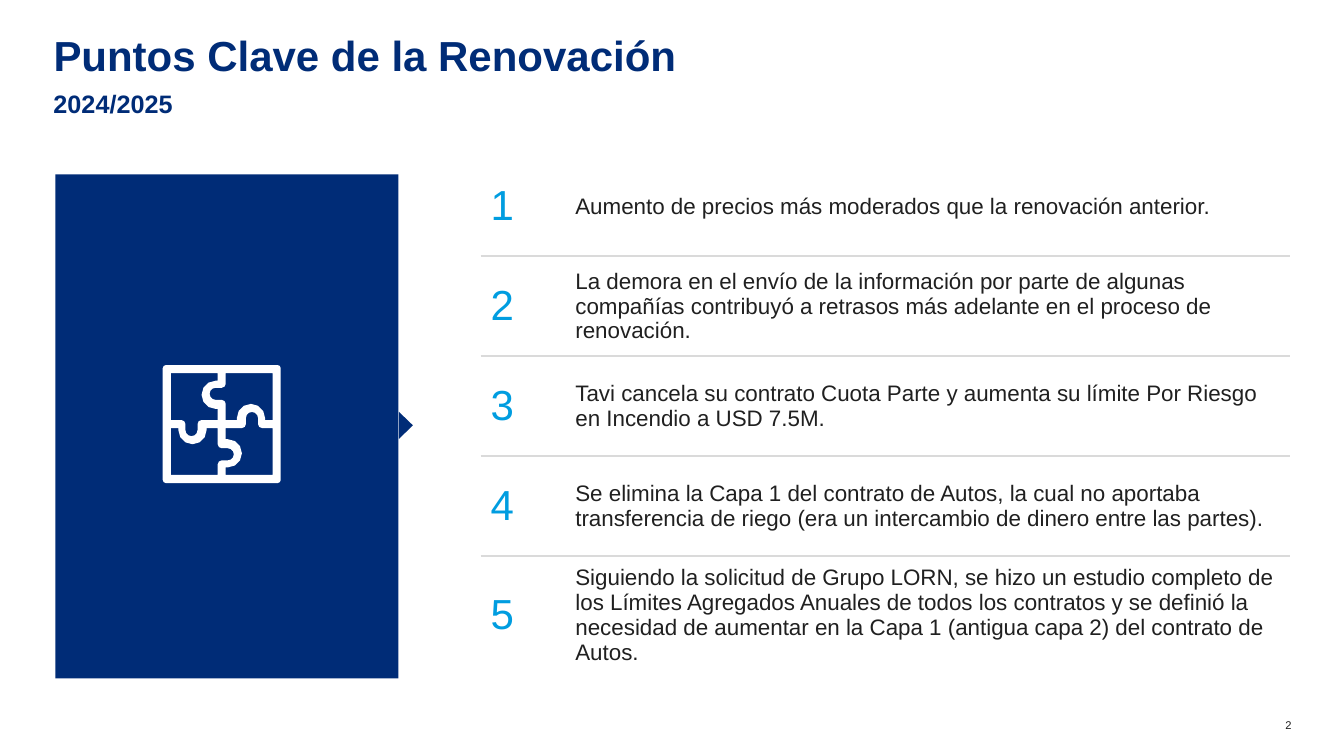
from dataclasses import dataclass
from math import cos, radians, sin

from lxml.etree import SubElement
from pptx import Presentation
from pptx.dml.color import RGBColor
from pptx.enum.shapes import MSO_SHAPE
from pptx.enum.text import MSO_ANCHOR, PP_ALIGN
from pptx.oxml.ns import qn
from pptx.util import Inches, Pt

COLORS = {"navy": "002C77", "sky": "009DE0", "text": "202020", "rule": "DADADA", "white": "FFFFFF"}
WIDTH, HEIGHT = Inches(13.33), Inches(7.5)
NO_STYLE = "{2D5ABB26-0587-4C30-8999-92F81FD0307C}"
KEY_POINTS = [
    "Aumento de precios más moderados que la renovación anterior.",
    "La demora en el envío de la información por parte de algunas compañías contribuyó a "
    "retrasos más adelante en el proceso de renovación.",
    "Tavi cancela su contrato Cuota Parte y aumenta su límite Por Riesgo en Incendio a USD 7.5M.",
    "Se elimina la Capa 1 del contrato de Autos, la cual no aportaba transferencia de riego "
    "(era un intercambio de dinero entre las partes).",
    "Siguiendo la solicitud de Grupo LORN, se hizo un estudio completo de los Límites Agregados "
    "Anuales de todos los contratos y se definió la necesidad de aumentar en la Capa 1 "
    "(antigua capa 2) del contrato de Autos.",
]
Point = tuple[float, float]


def across(share: float) -> int:
    """Percentage of the slide's width."""
    return round(WIDTH * share / 100)


def down(share: float) -> int:
    """Percentage of the slide's height."""
    return round(HEIGHT * share / 100)


@dataclass(frozen=True)
class Area:
    """Place on the slide, in percent of its width and height."""
    left: float
    top: float
    width: float
    height: float

    def emu(self) -> tuple[int, int, int, int]:
        return across(self.left), down(self.top), across(self.width), down(self.height)


@dataclass(frozen=True)
class TextStyle:
    size: float
    color: str
    bold: bool = False
    align: PP_ALIGN = PP_ALIGN.LEFT
    spacing: float = 1.0


TITLE = TextStyle(30, "navy", bold=True, spacing=0.8)
SUBTITLE = TextStyle(18, "navy", bold=True)
PAGE_NUMBER = TextStyle(8, "text", align=PP_ALIGN.RIGHT)
ORDINAL = TextStyle(30, "sky")
STATEMENT = TextStyle(16, "text")


def rgb(name: str) -> RGBColor:
    return RGBColor.from_string(COLORS[name])


def write(frame, text: str, style: TextStyle) -> None:
    frame.text = text
    paragraph = frame.paragraphs[0]
    paragraph.alignment = style.align
    paragraph.line_spacing = style.spacing
    font = paragraph.font
    font.name, font.size, font.bold = "Arial", Pt(style.size), style.bold
    font.color.rgb = rgb(style.color)


def write_flush(shape, text: str, style: TextStyle, anchor: MSO_ANCHOR) -> None:
    """Write text without insets."""
    frame = shape.text_frame
    frame.margin_left = frame.margin_top = frame.margin_right = frame.margin_bottom = 0
    frame.word_wrap = True
    frame.vertical_anchor = anchor
    write(frame, text, style)


def paint(shape, color: str) -> None:
    shape.shadow.inherit = False
    shape.fill.solid()
    shape.fill.fore_color.rgb = rgb(color)
    shape.line.fill.background()


def rule_cell(cell, side: str) -> None:
    """Draw a border on a side: lnT or lnB."""
    line = SubElement(cell._tc.get_or_add_tcPr(), qn(f"a:{side}"), w=str(Pt(1.5)))
    SubElement(SubElement(line, qn("a:solidFill")), qn("a:srgbClr"), val=COLORS["rule"])


def add_key_points(slide) -> None:
    column_shares, row_share = (6.3, 53.94), 13.23
    area = Area(35.76, 20.67, sum(column_shares), row_share * len(KEY_POINTS))
    table = slide.shapes.add_table(len(KEY_POINTS), 2, *area.emu()).table
    table._tbl.tblPr.find(qn("a:tableStyleId")).text = NO_STYLE
    table.first_row = table.horz_banding = False
    for column, share in zip(table.columns, column_shares):
        column.width = across(share)
    for index, statement in enumerate(KEY_POINTS):
        table.rows[index].height = down(row_share)
        contents = ((str(index + 1), ORDINAL), (statement, STATEMENT))
        for column_index, (text, style) in enumerate(contents):
            cell = table.cell(index, column_index)
            write(cell.text_frame, text, style)
            cell.vertical_anchor = MSO_ANCHOR.MIDDLE
            if index > 0:
                rule_cell(cell, "lnT")
            if index < len(KEY_POINTS) - 1:
                rule_cell(cell, "lnB")
            cell.fill.background()


def arc(x: float, y: float, radius: float, start: int, end: int) -> list[Point]:
    steps = 6 if radius > 5 else 2
    angles = [radians(start + (end - start) * step / steps) for step in range(steps + 1)]
    return [(x + radius * cos(angle), y + radius * sin(angle)) for angle in angles]


def quarter_turns(points: list[Point], turns: int) -> list[Point]:
    for _ in range(turns):
        points = [(-y, x) for x, y in points]
    return points


def add_puzzle(slide) -> None:
    """Draw a square with four interlocking cut-outs around its centre."""
    center_x, center_y, unit = across(16.5), down(56.1), HEIGHT / 750
    corner = arc(55.5, -55.5, 3, -90, 0)
    piece = [
        (50.5, -4), (43, -4), *arc(29, -6, 14, 0, -180), (15, -4), (4, -4),
        *arc(0, -20, 4, 0, -90), *arc(-6, -30, 6, 90, 270), *arc(0, -40, 4, 90, 0),
        (4, -50.5), (50.5, -50.5),
    ]
    frame = [point for turn in range(4) for point in quarter_turns(corner, turn)]
    contours = [frame] + [quarter_turns(piece, turn) for turn in range(4)]
    placed = [[(center_x + x * unit, center_y + y * unit) for x, y in contour]
              for contour in contours]
    builder = slide.shapes.build_freeform(*placed[0][0])
    for index, contour in enumerate(placed):
        if index:
            builder.move_to(*contour[0])
        builder.add_line_segments(contour[1:], close=True)
    paint(builder.convert_to_shape(), "white")


def main() -> None:
    deck = Presentation()
    deck.slide_width, deck.slide_height = WIDTH, HEIGHT
    slide = deck.slides.add_slide(deck.slide_layouts[5])
    shapes = slide.shapes

    title = shapes.title
    title.left, title.top, title.width, title.height = Area(3.98, 5.2, 92.05, 7.2).emu()
    write_flush(title, "Puntos Clave de la Renovación", TITLE, MSO_ANCHOR.TOP)
    page_number = shapes.add_textbox(*Area(93.77, 95.07, 2.33, 1.73).emu())
    write_flush(page_number, "2", PAGE_NUMBER, MSO_ANCHOR.TOP)
    period = shapes.add_textbox(*Area(3.98, 11.73, 92.12, 4.67).emu())
    write_flush(period, "2024/2025", SUBTITLE, MSO_ANCHOR.TOP)

    panel = shapes.add_shape(MSO_SHAPE.RECTANGLE, *Area(4.13, 23.07, 25.51, 66.67).emu())
    paint(panel, "navy")
    pointer = shapes.add_shape(MSO_SHAPE.ISOSCELES_TRIANGLE, *Area(29.18, 55.33, 2.03, 1.87).emu())
    pointer.rotation = 90
    paint(pointer, "navy")
    add_key_points(slide)
    add_puzzle(slide)
    deck.save("out.pptx")


if __name__ == "__main__":
    main()
